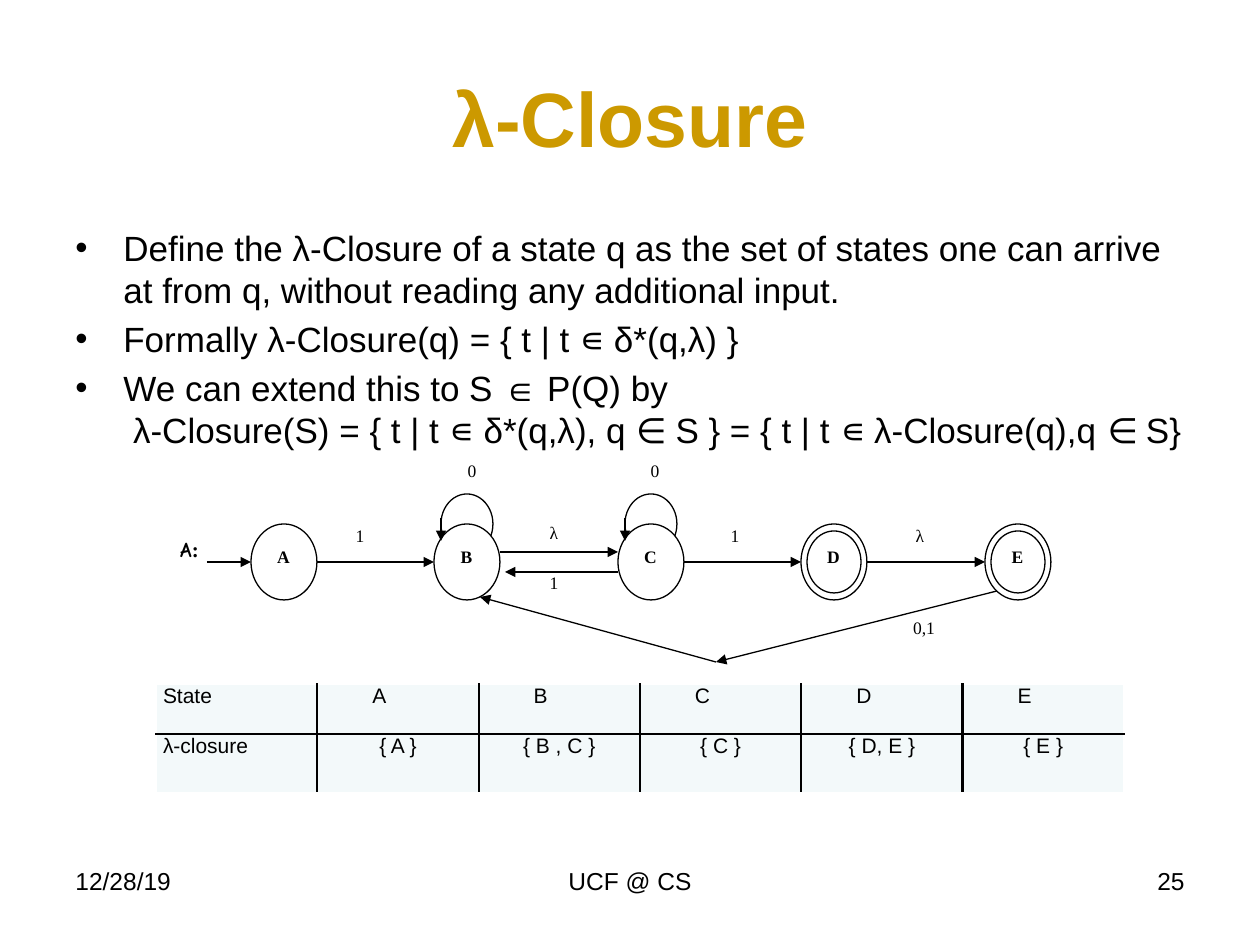
from lxml.etree import SubElement
from pptx import Presentation
from pptx.dml.color import RGBColor
from pptx.enum.shapes import MSO_CONNECTOR as Connector, MSO_SHAPE as Shape
from pptx.enum.text import MSO_ANCHOR as Anchor, PP_ALIGN as Align
from pptx.oxml.ns import qn
from pptx.util import Emu, Pt

PX_PER_INCH = 126
BLACK = RGBColor(0x00, 0x00, 0x00)
WHITE = RGBColor(0xFF, 0xFF, 0xFF)
GOLD = RGBColor(0xCC, 0x99, 0x00)
CELL_TINT = RGBColor(0xF3, 0xF9, 0xFA)
SANS, SERIF, COMIC = "Arial", "Times New Roman", "Comic Neue"

STATES = "ABCDE"
LOOPING = "BC"
ACCEPTING = "DE"
CLOSURES = ["{ A }", "{ B , C }", "{ C }", "{ D, E }", "{ E }"]
BULLETS = [
    ["Define the λ-Closure of a state q as the set of states one can arrive "
     "at from q, without reading any additional input."],
    ["Formally λ-Closure(q) = { t | t ∊ δ*(q,λ) }"],
    ["We can extend this to S ∈ P(Q) by",
     " λ-Closure(S) = { t | t ∊ δ*(q,λ), q ∈ S } = { t | t ∊ λ-Closure(q),q ∈ S}"],
]


def px(length):
    return Emu(round(length * 914400 / PX_PER_INCH))


def add_run(paragraph, text, size, font=SANS, color=BLACK, bold=False):
    run = paragraph.add_run()
    run.text = text
    run.font.size = Pt(size)
    run.font.name = font
    run.font.bold = bold
    run.font.color.rgb = color


def add_frame(shapes, box, anchor=Anchor.TOP, inset=True):
    """Add a wrapping text box and return its text frame."""
    frame = shapes.add_textbox(*map(px, box)).text_frame
    frame.word_wrap = True
    frame.vertical_anchor = anchor
    if not inset:
        frame.margin_left = frame.margin_top = 0
        frame.margin_right = frame.margin_bottom = 0
    return frame


def add_line_of_text(shapes, box, text, size, align=Align.CENTER,
                     anchor=Anchor.TOP, inset=True, **style):
    paragraph = add_frame(shapes, box, anchor, inset).paragraphs[0]
    paragraph.alignment = align
    add_run(paragraph, text, size, **style)
    return paragraph


def add_bullets(shapes, box):
    frame = add_frame(shapes, box)
    for number, lines in enumerate(BULLETS):
        paragraph = frame.add_paragraph() if number else frame.paragraphs[0]
        paragraph.space_before = Pt(4)
        properties = paragraph._p.get_or_add_pPr()
        properties.set("marL", str(px(48)))
        properties.set("indent", str(px(-48)))
        SubElement(properties, qn("a:buFont")).set("typeface", SANS)
        SubElement(properties, qn("a:buChar")).set("char", "•")
        for position, line in enumerate(lines):
            if position:
                paragraph.add_line_break()
            add_run(paragraph, line, 20)


def add_footer(shapes, left, top, right):
    width, height = 294, 66
    center = (left + right - 400) // 2
    add_line_of_text(shapes, (left, top, width, height), "12/28/19", 14, Align.LEFT)
    add_line_of_text(shapes, (center, top, 400, height), "UCF @ CS", 14)
    add_line_of_text(shapes, (right - width, top, width, height), "25", 14, Align.RIGHT)


def add_ring(shapes, *box):
    ring = shapes.add_shape(Shape.OVAL, *map(px, box))
    ring.shadow.inherit = False
    ring.fill.solid()
    ring.fill.fore_color.rgb = WHITE
    ring.line.color.rgb = BLACK
    ring.line.width = Pt(0.75)


def add_arrow(shapes, *ends):
    arrow = shapes.add_connector(Connector.STRAIGHT, *map(px, ends))
    arrow.line.color.rgb = BLACK
    arrow.line.width = Pt(0.75)
    SubElement(arrow.line._get_or_add_ln(), qn("a:tailEnd")).set("type", "triangle")
    SubElement(arrow._element.spPr, qn("a:effectLst"))


def add_automaton(slide, left, top):
    """Draw the states A to E with their transitions as one group."""
    shapes = slide.shapes.add_group_shape().shapes
    width, height = 66, 76
    state_top = top + 64
    middle = state_top + height // 2
    state_left = {name: left + 91 + i * 367 // 2 for i, name in enumerate(STATES)}

    for name in LOOPING:
        x = state_left[name] + 7
        add_ring(shapes, x, state_top - 30, 52, 60)
    for name, x in state_left.items():
        add_ring(shapes, x, state_top, width, height)
        if name in ACCEPTING:
            add_ring(shapes, x + 6, state_top + 7, width - 12, height - 14)
        add_line_of_text(shapes, (x + 8, state_top + 16, 49, 48), name, 10,
                         font=SERIF, bold=True)
    for name in LOOPING:
        x = state_left[name] + 7
        add_arrow(shapes, x, state_top - 6, x, state_top + 17)

    add_arrow(shapes, left + 47, middle, state_left["A"], middle)
    for source, target in ("AB", "CD", "DE"):
        add_arrow(shapes, state_left[source] + width, middle, state_left[target], middle)
    b_right, c_left = state_left["B"] + width, state_left["C"]
    add_arrow(shapes, b_right, middle - 10, c_left, middle - 10)
    add_arrow(shapes, c_left, middle + 10, b_right + 5, middle + 10)
    bend = left + 556, top + 202
    add_arrow(shapes, left + 837, top + 131, *bend)
    add_arrow(shapes, *bend, left + 320, top + 137)

    symbols = [("0", 312, 0), ("0", 495, 0), ("1", 200, 65), ("λ", 394, 62),
               ("1", 394, 112), ("1", 575, 65), ("λ", 760, 65), ("0,1", 764, 157)]
    for symbol, center, offset in symbols:
        add_line_of_text(shapes, (left + center - 26, top + offset, 52, 36),
                         symbol, 10, inset=False, font=SERIF)
    caption = add_line_of_text(shapes, (left, top + 70, 59, 48), "A", 12,
                               font=COMIC, bold=True)
    add_run(caption, ":", 12, SERIF, bold=True)


def set_border(cell, side, color, width):
    border = SubElement(cell._tc.get_or_add_tcPr(), qn(f"a:{side}"), w=str(Pt(width)))
    fill = SubElement(border, qn("a:solidFill"))
    SubElement(fill, qn("a:srgbClr")).set("val", str(color))


def add_closure_table(slide, left, top, width, row_heights):
    rows = [["State", *STATES], ["λ-closure", *CLOSURES]]
    last_row, last_column = len(rows) - 1, len(rows[0]) - 1
    table = slide.shapes.add_table(len(rows), len(rows[0]), px(left), px(top),
                                   px(width), px(sum(row_heights))).table
    table.first_row = table.horz_banding = False
    for r, texts in enumerate(rows):
        table.rows[r].height = px(row_heights[r])
        for c, text in enumerate(texts):
            cell = table.cell(r, c)
            cell.margin_left = cell.margin_right = px(7)
            cell.margin_top = cell.margin_bottom = 0
            outer_sides = {"lnL": c == 0, "lnR": c == last_column,
                           "lnT": r == 0, "lnB": r == last_row}
            for side, outer in outer_sides.items():
                set_border(cell, side, *((WHITE, 1) if outer else (BLACK, 1.5)))
            cell.fill.solid()
            cell.fill.fore_color.rgb = CELL_TINT
            paragraph = cell.text_frame.paragraphs[0]
            if c and r:
                paragraph.alignment = Align.CENTER
            elif c:
                paragraph._p.get_or_add_pPr().set("marL", str(px(48)))
            add_run(paragraph, text, 12)


def main():
    deck = Presentation()
    deck.slide_width, deck.slide_height = px(1260), px(945)
    slide = deck.slides.add_slide(deck.slide_layouts[6])
    add_line_of_text(slide.shapes, (63, 38, 1134, 158), "λ-Closure", 44,
                     anchor=Anchor.MIDDLE, color=GOLD, bold=True)
    add_bullets(slide.shapes, (63, 220, 1134, 624))
    add_footer(slide.shapes, 63, 860, 1197)
    add_automaton(slide, 160, 460)
    add_closure_table(slide, 156, 684, 968, (50, 59))
    deck.save("out.pptx")


if __name__ == "__main__":
    main()
